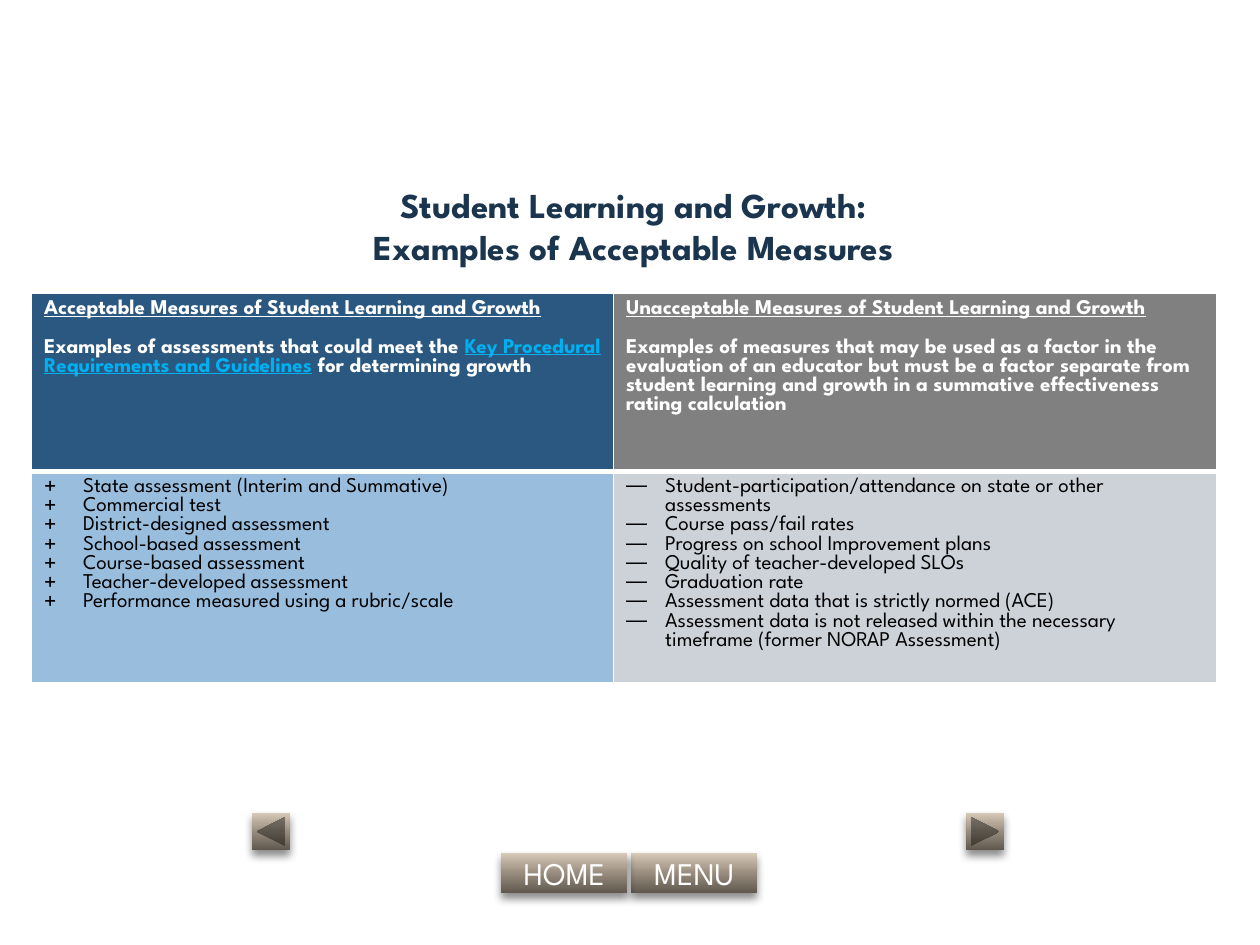
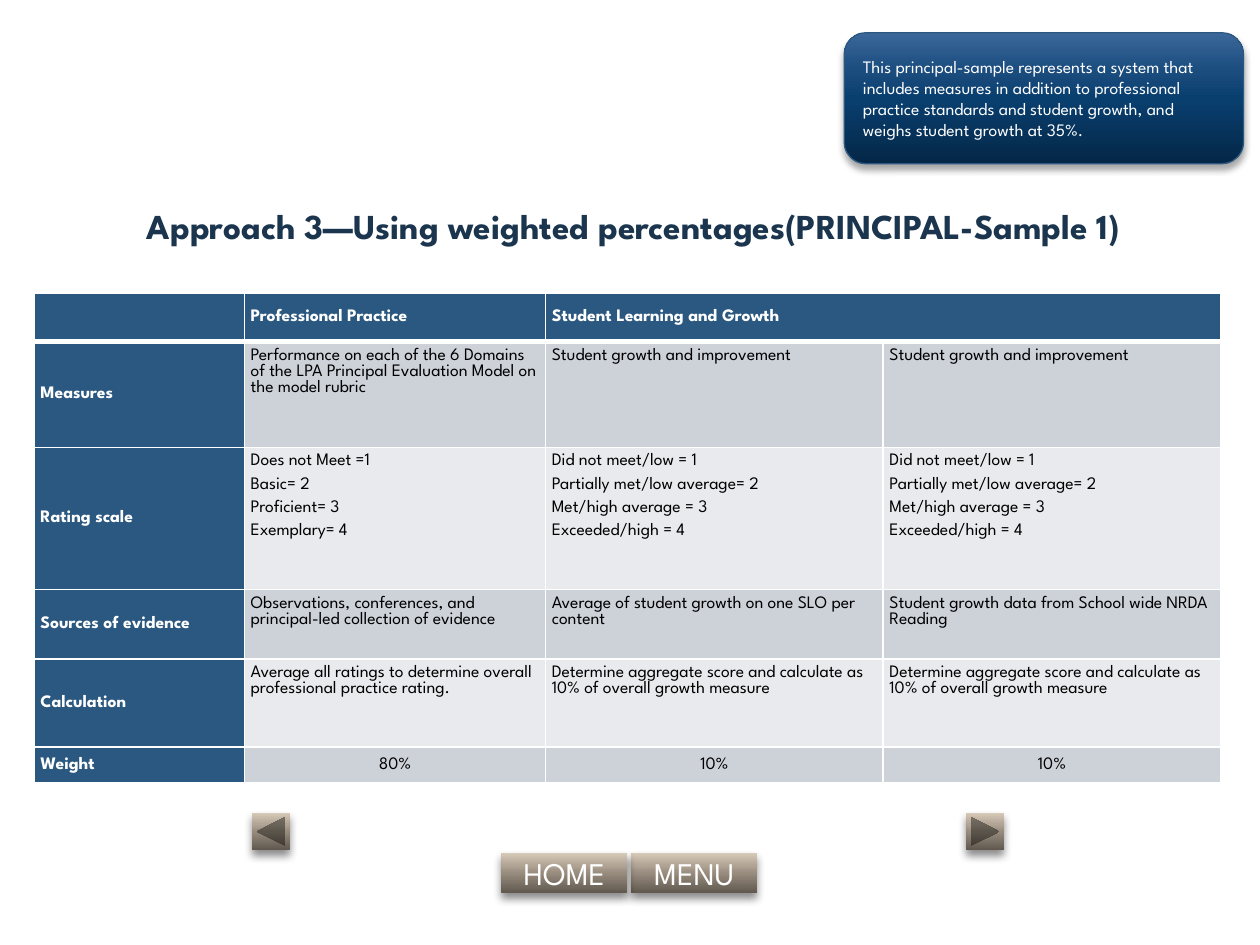
import pptx
import pptx.dml.color
import pptx.enum.shapes
import pptx.enum.text
import pptx.oxml
import pptx.oxml.ns
import pptx.util
from lxml import etree

SHAPES = pptx.enum.shapes.MSO_SHAPE
ALIGN = pptx.enum.text.PP_ALIGN
ANCHOR = pptx.enum.text.MSO_ANCHOR
COLORS = {
    "title": "1A354D", "navy": "2B5880", "gray": "808080", "sky": "99BDDD",
    "silver": "CDD1D8", "pale": "E8EAED", "link": "00B0F0",
    "white": "FFFFFF", "black": "000000",
}
GRADIENTS = {
    "button": {0: "5F574E", 50: "988C7E", 70: "B2A596", 100: "D8CAB8"},
    "callout": {0: "042747", 50: "093F6F", 70: "1A4C7E", 100: "3B679A"},
}


def child(parent, tag, **attributes):
    """Append a DrawingML element to a parent."""
    element = etree.SubElement(parent, pptx.oxml.ns.qn(f"a:{tag}"))
    for name, value in attributes.items():
        element.set(name, str(value))
    return element


class Deck:
    """Shared style, a 100 by 75 grid and the slide being built."""

    font = "League Spartan"
    columns, rows = 100, 75

    def __init__(self):
        """Open a presentation of 10 by 7.5 inches."""
        self.presentation = pptx.Presentation()
        self.presentation.slide_width = pptx.util.Inches(10)
        self.presentation.slide_height = pptx.util.Inches(7.5)
        self.slide = None

    def across(self, count):
        """Return the width of a number of grid columns."""
        return int(self.presentation.slide_width * count / self.columns)

    def down(self, count):
        """Return the height of a number of grid rows."""
        return int(self.presentation.slide_height * count / self.rows)

    def area(self, left, top, width, height):
        """Return a grid area as lengths."""
        return self.across(left), self.down(top), self.across(width), self.down(height)

    def add_text(self, frame, paragraphs, size, color, leading, align=ALIGN.LEFT,
                 gaps=0, bullet=None, **style):
        """Fill a text frame with paragraphs, each a string or a list of runs."""
        frame.word_wrap = True
        for index, content in enumerate(paragraphs):
            paragraph = frame.add_paragraph() if index else frame.paragraphs[0]
            if bullet:
                properties = paragraph._p.get_or_add_pPr()
                indent = self.across(3.1)
                properties.set("marL", str(indent))
                properties.set("indent", str(-indent))
                child(properties, "buChar", char=bullet)
            paragraph.alignment = align
            paragraph.line_spacing = pptx.util.Pt(size * leading)
            paragraph.space_before = pptx.util.Pt(gaps if index else 0)
            runs = [(content, {})] if isinstance(content, str) else content
            for text, changes in runs:
                self.add_run(paragraph, text, size, **{"color": color, **style, **changes})

    def add_run(self, paragraph, text, size, color, bold=False, underline=False):
        """Add one run of text."""
        run = paragraph.add_run()
        run.text = text
        run.font.name = self.font
        run.font.size = pptx.util.Pt(size)
        run.font.bold = bold
        run.font.underline = underline
        run.font.color.rgb = pptx.dml.color.RGBColor.from_string(COLORS[color])

    def start(self, *title_lines):
        """Begin a slide with its title and navigation buttons."""
        self.slide = self.presentation.slides.add_slide(self.presentation.slide_layouts[5])
        title = self.slide.shapes.title
        title.left, title.top, title.width, title.height = self.area(0.3, 13.3, 100, 9.2)
        title.text_frame.auto_size = pptx.enum.text.MSO_AUTO_SIZE.NONE
        title.text_frame.vertical_anchor = ANCHOR.MIDDLE
        self.add_text(title.text_frame, title_lines, 20, "title", 1.2, ALIGN.CENTER, bold=True)
        self.navigation()

    def navigation(self):
        """Draw the arrow, menu and home buttons."""
        self.glossy(SHAPES.ACTION_BUTTON_FORWARD_OR_NEXT, (76.7, 64.5, 3, 3), "button")
        self.glossy(SHAPES.ACTION_BUTTON_BACK_OR_PREVIOUS, (20, 64.5, 3, 3), "button")
        for label, left in (("MENU", 50.1), ("HOME", 39.8)):
            button = self.glossy(SHAPES.ACTION_BUTTON_CUSTOM, (left, 67.7, 10, 3.2), "button")
            self.add_text(button.text_frame, [label], 18, "white", 1.2, ALIGN.CENTER)

    def glossy(self, kind, area, gradient, opacity=45, blur=5):
        """Draw a shape with a vertical gradient and a soft shadow."""
        shape = self.slide.shapes.add_shape(kind, *self.area(*area))
        shape.line.fill.background()
        shape.fill.gradient()
        shape.fill.gradient_angle = 90
        stops = shape._element.spPr.find(".//" + pptx.oxml.ns.qn("a:gsLst"))
        for stop in list(stops):
            stops.remove(stop)
        for position, color in GRADIENTS[gradient].items():
            child(child(stops, "gs", pos=position * 1000), "srgbClr", val=color)
        shape.shadow.inherit = False
        effects = shape._element.spPr.find(pptx.oxml.ns.qn("a:effectLst"))
        shadow = child(effects, "outerShdw", blurRad=pptx.util.Pt(blur),
                       dist=pptx.util.Pt(3), dir=90 * 60000, rotWithShape=0)
        child(child(shadow, "srgbClr", val=COLORS["black"]), "alpha", val=opacity * 1000)
        shape.text_frame.vertical_anchor = ANCHOR.MIDDLE
        return shape

    def callout(self, area, text):
        """Draw a rounded note."""
        note = self.glossy(SHAPES.ROUNDED_RECTANGLE, area, "callout", 35, 4)
        note.line.color.rgb = pptx.dml.color.RGBColor.from_string(COLORS["navy"])
        note.line.width = pptx.util.Pt(0.75)
        self.add_text(note.text_frame, [text], 10, "white", 1.2)

    def table(self, left, top, widths, heights):
        """Add a plain table with the given column and row sizes."""
        area = self.area(left, top, sum(widths), sum(heights))
        table = self.slide.shapes.add_table(len(heights), len(widths), *area).table
        table.first_row = table.horz_banding = False
        for column, width in zip(table.columns, widths):
            column.width = self.across(width)
        for row, height in zip(table.rows, heights):
            row.height = self.down(height)
        return table

    def cell(self, table, row, column, paragraphs, fill, size, color="black",
             side_margin=0.5, anchor=ANCHOR.TOP, **style):
        """Set the text, borders and fill of one table cell."""
        cell = table.cell(row, column)
        cell.margin_left = cell.margin_right = self.across(side_margin)
        cell.margin_top = cell.margin_bottom = self.down(0.5)
        cell.vertical_anchor = anchor
        self.add_text(cell.text_frame, paragraphs, size, color, 0.92, **style)
        widths = {"lnL": 1, "lnR": 1, "lnT": 3 if row == 1 else 1, "lnB": 1 if row else 3}
        for tag, width in widths.items():
            border = child(cell._tc.get_or_add_tcPr(), tag, w=pptx.util.Pt(width))
            child(child(border, "solidFill"), "srgbClr", val=COLORS["white"])
        cell.fill.solid()
        cell.fill.fore_color.rgb = pptx.dml.color.RGBColor.from_string(COLORS[fill])


def acceptable_measures(deck):
    """Build the comparison of acceptable and unacceptable measures."""
    deck.start("Student Learning and Growth:", "Examples of Acceptable Measures")
    table = deck.table(2.5, 23.3, (46.2, 47.9), (14.1, 16.8))
    sides = (
        ("navy", "sky", "+", "Acceptable Measures of Student Learning and Growth", [
            ("Examples of assessments that could meet the ", {}),
            ("Key Procedural Requirements and Guidelines", {"color": "link", "underline": True}),
            (" for determining growth", {}),
        ], [
            "State assessment (Interim and Summative)", "Commercial test",
            "District-designed assessment", "School-based assessment",
            "Course-based assessment", "Teacher-developed assessment",
            "Performance measured using a rubric/scale",
        ]),
        ("gray", "silver", "―", "Unacceptable Measures of Student Learning and Growth",
         "Examples of measures that may be used as a factor in the evaluation of an educator "
         "but must be a factor separate from student learning and growth in a summative "
         "effectiveness rating calculation", [
            "Student-participation/attendance on state or other assessments",
            "Course pass/fail rates", "Progress on school Improvement plans",
            "Quality of teacher-developed SLOs", "Graduation rate",
            "Assessment data that is strictly normed (ACE)",
            "Assessment data is not released within the necessary timeframe "
            "(former NORAP Assessment)",
        ]),
    )
    for column, (head_fill, body_fill, bullet, heading, summary, examples) in enumerate(sides):
        head = [[(heading, {"underline": True})], summary]
        deck.cell(table, 0, column, head, head_fill, 12, "white", 1, gaps=11, bold=True)
        deck.cell(table, 1, column, examples, body_fill, 12, side_margin=1, bullet=bullet)


def weighted_percentages(deck):
    """Build the weighted example for a principal."""
    deck.start("Approach 3—Using weighted percentages(PRINCIPAL-Sample 1)")
    deck.callout((67, 2.6, 31.7, 10.4),
                 "This principal-sample represents a system that includes measures in addition to "
                 "professional practice standards and student growth, and weighs student growth "
                 "at 35%.")
    table = deck.table(2.7, 23.3, (16.7, 23.9, 26.8, 26.8), (2.8, 8.4, 11.3, 5.5, 7, 2.8))
    growth = ["Student growth and improvement"]
    growth_scale = ["Did not meet/low = 1", "Partially met/low average= 2",
                    "Met/high average = 3", "Exceeded/high = 4"]
    growth_score = ["Determine aggregate score and calculate as 10% of overall growth measure"]
    content = (
        ("", ["Professional Practice"], ["Student Learning and Growth"]),
        ("Measures", ["Performance on each of the 6 Domains of the LPA Principal Evaluation "
                      "Model on the model rubric"], growth, growth),
        ("Rating scale", ["Does not Meet =1", "Basic= 2", "Proficient= 3", "Exemplary= 4"],
         growth_scale, growth_scale),
        ("Sources of evidence",
         ["Observations, conferences, and principal-led collection of evidence"],
         ["Average of student growth on one SLO per content"],
         ["Student growth data from School wide NRDA Reading"]),
        ("Calculation", ["Average all ratings to determine overall professional practice rating."],
         growth_score, growth_score),
        ("Weight", ["80%"], ["10%"], ["10%"]),
    )
    table.cell(0, 2).merge(table.cell(0, 3))
    for row, (label, *entries) in enumerate(content):
        for column, paragraphs in enumerate([[label], *entries]):
            if row == 0 or column == 0:
                look = {"fill": "navy", "color": "white", "bold": True, "anchor": ANCHOR.MIDDLE}
            else:
                look = {"fill": "silver" if row % 2 else "pale", "gaps": 4}
                if label == "Weight":
                    look.update(anchor=ANCHOR.MIDDLE, align=ALIGN.CENTER)
            deck.cell(table, row, column, paragraphs, size=10, **look)


def main():
    """Build and save both slides."""
    deck = Deck()
    acceptable_measures(deck)
    weighted_percentages(deck)
    deck.presentation.save("out.pptx")


if __name__ == "__main__":
    main()
